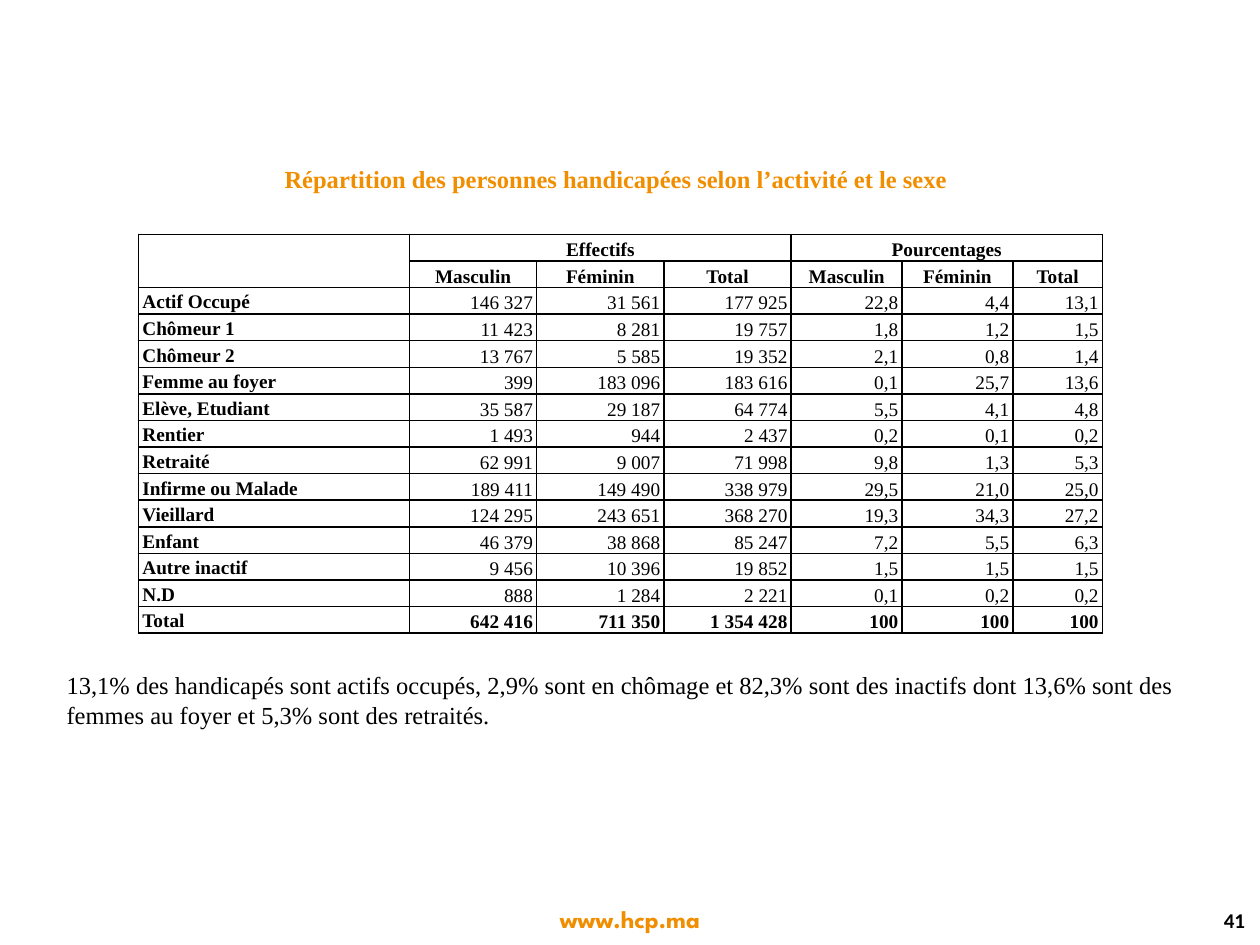
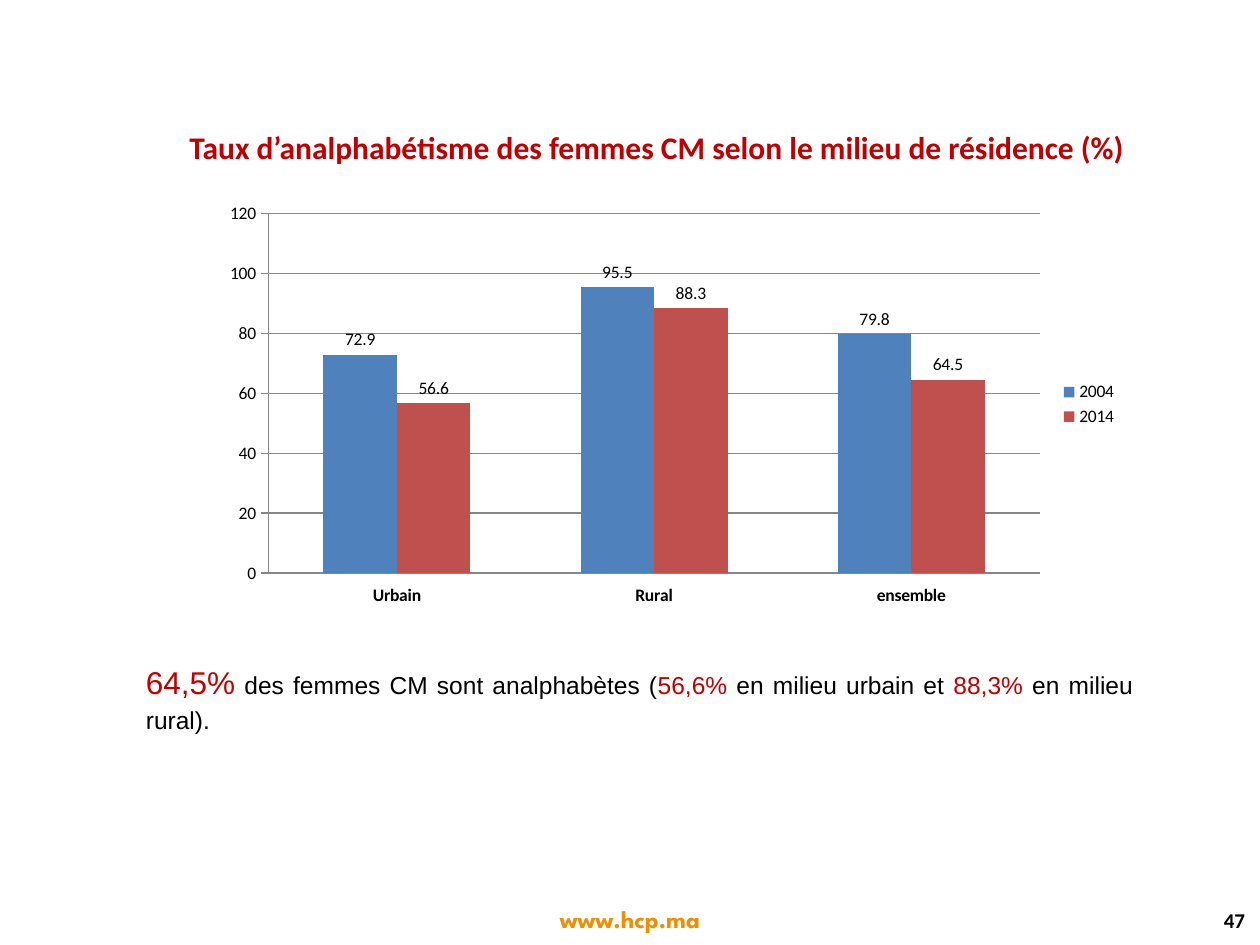
from lxml import etree
from pptx import Presentation
from pptx.chart.data import CategoryChartData
from pptx.dml.color import RGBColor
from pptx.enum.chart import XL_CHART_TYPE, XL_LABEL_POSITION, XL_LEGEND_POSITION, XL_TICK_MARK
from pptx.enum.text import MSO_ANCHOR, PP_ALIGN
from pptx.oxml.ns import qn
from pptx.util import Inches, Pt

# Shared style
WIDTH, HEIGHT = 10, 7.5
BLACK, ORANGE, RED, GREY = "000000", "F18E00", "C00000", "868686"
SERIF, SANS, TITLE_FONT, SITE_FONT = "Times New Roman", "Arial", "Calibri", "League Spartan"
SITE = "www.hcp.ma"

# Slide 1 content
ACTIVITY_TITLE = "Répartition des personnes handicapées selon l’activité et le sexe"
GROUPS = ["Effectifs", "Pourcentages"]
SEXES = ["Masculin", "Féminin", "Total"]
ACTIVITIES = [
    ("Actif Occupé", "146 327", "31 561", "177 925", "22,8", "4,4", "13,1"),
    ("Chômeur 1", "11 423", "8 281", "19 757", "1,8", "1,2", "1,5"),
    ("Chômeur 2", "13 767", "5 585", "19 352", "2,1", "0,8", "1,4"),
    ("Femme au foyer", "399", "183 096", "183 616", "0,1", "25,7", "13,6"),
    ("Elève, Etudiant", "35 587", "29 187", "64 774", "5,5", "4,1", "4,8"),
    ("Rentier", "1 493", "944", "2 437", "0,2", "0,1", "0,2"),
    ("Retraité", "62 991", "9 007", "71 998", "9,8", "1,3", "5,3"),
    ("Infirme ou Malade", "189 411", "149 490", "338 979", "29,5", "21,0", "25,0"),
    ("Vieillard", "124 295", "243 651", "368 270", "19,3", "34,3", "27,2"),
    ("Enfant", "46 379", "38 868", "85 247", "7,2", "5,5", "6,3"),
    ("Autre inactif", "9 456", "10 396", "19 852", "1,5", "1,5", "1,5"),
    ("N.D", "888", "1 284", "2 221", "0,1", "0,2", "0,2"),
    ("Total", "642 416", "711 350", "1 354 428", "100", "100", "100"),
]
COLUMN_WIDTHS = [2.15, 1.01, 1.01, 1.01, 0.88, 0.88, 0.71]
TABLE_HEIGHT = 3.16
ACTIVITY_NOTE = (
    "13,1% des handicapés sont actifs occupés, 2,9% sont en chômage et 82,3% sont des "
    "inactifs dont 13,6% sont des femmes au foyer et 5,3% sont des retraités."
)

# Slide 2 content
LITERACY_TITLE = "Taux d’analphabétisme des femmes CM selon le milieu de résidence (%)"
AREAS = ["Urbain", "Rural", "ensemble"]
RATES = [("2004", "4F81BD", [72.9, 95.5, 79.8]), ("2014", "C0504D", [56.6, 88.3, 64.5])]
LITERACY_NOTE = [
    ("64,5%", RED, 18),
    (" des femmes CM sont analphabètes (", BLACK, 14),
    ("56,6%", RED, 14),
    (" en milieu urbain et ", BLACK, 14),
    ("88,3%", RED, 14),
    (" en milieu rural).", BLACK, 14),
]


def rgb(value):
    return RGBColor.from_string(value)


def style_font(font, size, color=BLACK, name=TITLE_FONT, bold=False):
    font.size, font.name, font.bold = Pt(size), name, bold
    font.color.rgb = rgb(color)


def write(frame, text, size=14, color=BLACK, font=SERIF, bold=False,
          align=PP_ALIGN.LEFT, spacing=None):
    """Fill the first paragraph with a string or with (text, color, size) runs."""
    paragraph = frame.paragraphs[0]
    paragraph.alignment = align
    if spacing:
        paragraph.line_spacing = spacing
    for words, run_color, run_size in [(text, color, size)] if isinstance(text, str) else text:
        run = paragraph.add_run()
        run.text = words
        style_font(run.font, run_size, run_color, font, bold)


def add_text(slide, box, text, anchor=MSO_ANCHOR.TOP, wrap=True, **style):
    frame = slide.shapes.add_textbox(*map(Inches, box)).text_frame
    frame.word_wrap, frame.vertical_anchor = wrap, anchor
    write(frame, text, **style)


def add_slide(presentation, number):
    slide = presentation.slides.add_slide(presentation.slide_layouts[6])
    footer_top = 0.95 * HEIGHT
    add_text(slide, (3.82, footer_top, 2.36, 0.33), SITE, color=ORANGE, font=SITE_FONT,
             bold=True, align=PP_ALIGN.CENTER)
    add_text(slide, (8.46, footer_top, 1.52, 0.35), number, anchor=MSO_ANCHOR.MIDDLE, size=12,
             font=TITLE_FONT, bold=True, align=PP_ALIGN.RIGHT)
    return slide


def add_borders(cell):
    properties = cell._tc.get_or_add_tcPr()
    for position, side in enumerate(("a:lnL", "a:lnR", "a:lnT", "a:lnB")):
        line = etree.Element(qn(side), w=str(Pt(1)))
        fill = etree.SubElement(line, qn("a:solidFill"))
        etree.SubElement(fill, qn("a:srgbClr"), val=BLACK)
        properties.insert(position, line)


def add_activity_table(slide):
    # Two header rows, with the groups spanning the sexes
    group_row = [""]
    for group in GROUPS:
        group_row += [group] + [""] * (len(SEXES) - 1)
    rows = [group_row, [""] + SEXES * len(GROUPS), *ACTIVITIES]
    table = slide.shapes.add_table(
        len(rows), len(COLUMN_WIDTHS), Inches(1.1), Inches(1.86),
        Inches(sum(COLUMN_WIDTHS)), Inches(TABLE_HEIGHT)).table
    table.first_row = table.horz_banding = False
    for column, width in zip(table.columns, COLUMN_WIDTHS):
        column.width = Inches(width)
    for row in table.rows:
        row.height = Inches(TABLE_HEIGHT / len(rows))
    table.cell(0, 0).merge(table.cell(1, 0))
    for first in range(1, len(COLUMN_WIDTHS), len(SEXES)):
        table.cell(0, first).merge(table.cell(0, first + len(SEXES) - 1))

    for row_index, values in enumerate(rows):
        header, total = row_index < 2, row_index == len(rows) - 1
        for column_index, value in enumerate(values):
            cell = table.cell(row_index, column_index)
            label = column_index == 0
            cell.fill.background()
            cell.margin_left = cell.margin_right = Inches(0.03)
            cell.margin_top = cell.margin_bottom = 0
            cell.vertical_anchor = MSO_ANCHOR.MIDDLE if label else MSO_ANCHOR.BOTTOM
            add_borders(cell)
            if value:
                align = (PP_ALIGN.CENTER if header
                         else PP_ALIGN.LEFT if label else PP_ALIGN.RIGHT)
                write(cell.text_frame, value, size=11, bold=header or label or total,
                      align=align, spacing=1.15)
            else:
                paragraph = cell.text_frame.paragraphs[0]
                paragraph._p.get_or_add_endParaRPr().set("sz", "1100")


def add_literacy_chart(slide):
    data = CategoryChartData(number_format="General")
    data.categories = AREAS
    for year, _, values in RATES:
        data.add_series(year, values)
    chart = slide.shapes.add_chart(
        XL_CHART_TYPE.COLUMN_CLUSTERED, Inches(1.68), Inches(1.55),
        Inches(7.29), Inches(3.32), data).chart
    chart.has_title = False
    style_font(chart.font, 10)
    chart.has_legend = True
    chart.legend.position = XL_LEGEND_POSITION.RIGHT
    chart.legend.include_in_layout = False

    # Columns and their values
    plot = chart.plots[0]
    plot.gap_width, plot.overlap, plot.vary_by_categories = 150, 0, False
    for series, (_, color, _) in zip(plot.series, RATES):
        series.format.fill.solid()
        series.format.fill.fore_color.rgb = rgb(color)
        labels = series.data_labels
        labels.show_value = True
        labels.position = XL_LABEL_POSITION.OUTSIDE_END
        style_font(labels.font, 10)

    # Axes
    areas, values = chart.category_axis, chart.value_axis
    areas.format.line.fill.background()
    style_font(areas.tick_labels.font, 10, bold=True)
    values.minimum_scale, values.maximum_scale, values.major_unit = 0, 120, 20
    values.has_major_gridlines = True
    for axis in (areas, values):
        axis.major_tick_mark = XL_TICK_MARK.CROSS
    for line in (values.format.line, values.major_gridlines.format.line):
        line.color.rgb = rgb(GREY)
        line.width = Pt(0.75)


def main():
    presentation = Presentation()
    presentation.slide_width, presentation.slide_height = Inches(WIDTH), Inches(HEIGHT)

    # Activity by sex
    slide = add_slide(presentation, "41")
    add_activity_table(slide)
    add_text(slide, (2.16, 1.25, 5.51, 0.34), ACTIVITY_TITLE, anchor=MSO_ANCHOR.MIDDLE,
             wrap=False, color=ORANGE, bold=True)
    add_text(slide, (0.43, 5.27, 9.21, 0.57), ACTIVITY_NOTE)

    # Illiteracy by area
    slide = add_slide(presentation, "47")
    add_text(slide, (1.3, 0.94, 7.83, 0.46), LITERACY_TITLE, anchor=MSO_ANCHOR.MIDDLE, size=18,
             color=RED, font=TITLE_FONT, bold=True, align=PP_ALIGN.CENTER)
    add_literacy_chart(slide)
    add_text(slide, (1.06, 5.17, 8.03, 0.72), LITERACY_NOTE, font=SANS,
             align=PP_ALIGN.JUSTIFY, spacing=1.15)

    presentation.save("out.pptx")


if __name__ == "__main__":
    main()
